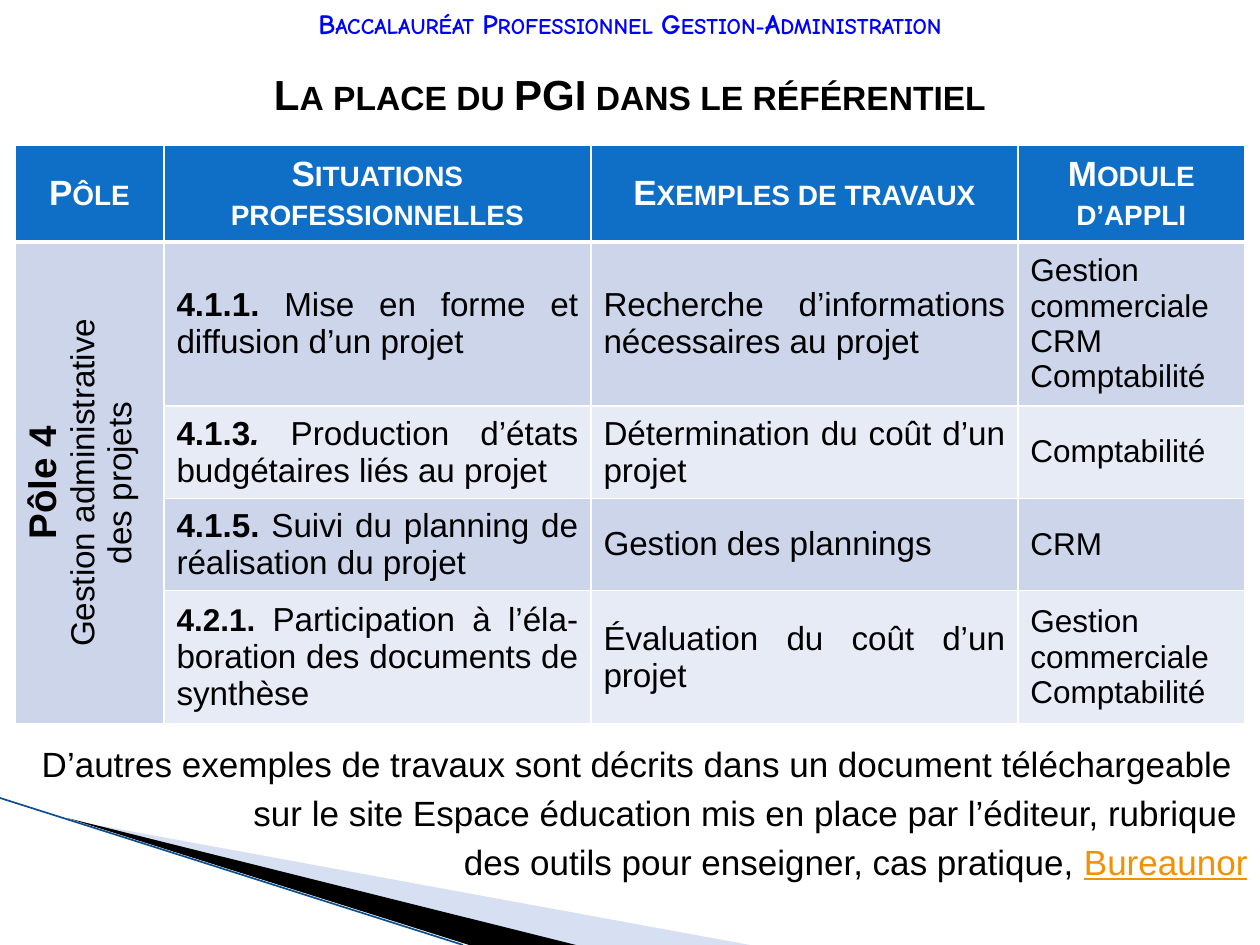
import pptx
import pptx.util
import pptx.dml.color
import pptx.enum.text
import pptx.enum.shapes
import pptx.oxml.ns
import lxml.etree

PX = 914400 // 126
HUE = {"ink": "000000", "white": "FFFFFF", "blue": "0000FF", "head": "0F6FC6",
       "odd": "CCD5EA", "even": "E7EBF5", "pale": "9DB2E1", "edge": "0B4F8F",
       "link": "F49100"}
ALIGN = pptx.enum.text.PP_ALIGN
LEFT, MID, RIGHT, JUST = ALIGN.LEFT, ALIGN.CENTER, ALIGN.RIGHT, ALIGN.JUSTIFY

# Content
BANNER = "Baccalauréat Professionnel Gestion-Administration"
TITLE = "La place du PGI dans le référentiel"
HEADS = ["Pôle", "Situations professionnelles", "Exemples de travaux", "Module d’appli"]
POLE = [("Pôle 4", 22, True), ("Gestion administrative\vdes projets", 19, False)]
# (number, its size, situation, example, example alignment, modules)
ROWS = [
    ("4.1.1.", 19, " Mise en forme et diffusion d’un projet",
     "Recherche d’informations nécessaires au projet", JUST,
     ["Gestion commerciale", "CRM Comptabilité"]),
    ("4.1.3.", 19, " Production d’états budgétaires liés au projet",
     "Détermination du coût d’un projet", JUST, ["Comptabilité"]),
    ("4.1.5.", 19, " Suivi du planning de réalisation du projet",
     "Gestion des plannings", LEFT, ["CRM"]),
    ("4.2.1.", 18, " Participation à l’éla-boration des documents de synthèse",
     "Évaluation du coût d’un projet", JUST,
     ["Gestion commerciale", "Comptabilité"]),
]
# (left, width, text, link text)
NOTES = [
    (20, 1235, "D’autres exemples de travaux sont décrits dans un document téléchargeable ", ""),
    (144, 1116, "sur le site Espace éducation mis en place par l’éditeur, rubrique ", ""),
    (144, 1116, "des outils pour enseigner, cas pratique, ", "Bureaunor"),
]
WIDTHS = [149, 427, 427, 227]
HEIGHTS = [97, 163, 92, 92, 133]
WEDGES = [("pale", 40, [(69, 820), (750, 945), (575, 945)]),
          ("ink", 100, [(67, 818), (576, 945), (469, 945)])]


def rgb(key):
    return pptx.dml.color.RGBColor.from_string(HUE[key])


def node(parent, tag, **attrs):
    return lxml.etree.SubElement(parent, pptx.oxml.ns.qn(tag), attrs)


def style(para, size, color="ink", bold=False, align=LEFT, face="Arial", caps=False):
    para.alignment = align
    font = para.font
    font.size, font.bold, font.name = pptx.util.Pt(size), bold, face
    font.color.rgb = rgb(color)
    if caps:
        para._p.pPr.find(pptx.oxml.ns.qn("a:defRPr")).set("cap", "small")


def write(frame, lines):
    """Fill a frame with (text, style) pairs, one paragraph each."""
    for i, (text, look) in enumerate(lines):
        para = frame.add_paragraph() if i else frame.paragraphs[0]
        para.text = text
        style(para, **look)


def box(x, y, w, h):
    frame = slide.shapes.add_textbox(x * PX, y * PX, w * PX, h * PX).text_frame
    frame.word_wrap = True
    return frame


def dress(cell, fill, base):
    """Draw white borders, then the fill."""
    props = cell._tc.get_or_add_tcPr()
    for side, width in (("L", 1), ("R", 1), ("T", 1), ("B", base)):
        line = node(props, "a:ln" + side, w=str(width * 12700))
        node(node(line, "a:solidFill"), "a:srgbClr", val=HUE["white"])
    cell.fill.solid()
    cell.fill.fore_color.rgb = rgb(fill)
    cell.vertical_anchor = pptx.enum.text.MSO_ANCHOR.MIDDLE


deck = pptx.Presentation()
deck.slide_width, deck.slide_height = 1260 * PX, 945 * PX
slide = deck.slides.add_slide(deck.slide_layouts[5])

# Corner wedges and edge line
for color, alpha, points in WEDGES:
    pen = slide.shapes.build_freeform(*points[0], scale=PX)
    pen.add_line_segments(points[1:], close=True)
    wedge = pen.convert_to_shape()
    wedge.shadow.inherit = False
    wedge.fill.solid()
    wedge.fill.fore_color.rgb = rgb(color)
    wedge.line.fill.background()
    if alpha < 100:
        tint = wedge._element.spPr.find(".//" + pptx.oxml.ns.qn("a:srgbClr"))
        node(tint, "a:alpha", val=str(alpha * 1000))
edge = slide.shapes.add_connector(pptx.enum.shapes.MSO_CONNECTOR.STRAIGHT,
                                  0, 798 * PX, 463 * PX, 945 * PX)
edge.line.color.rgb = rgb("edge")
edge.line.width = pptx.util.Pt(0.95)
node(edge._element.spPr, "a:effectLst")

# Banner and title
write(box(0, 0, 1260, 47),
      [(BANNER, dict(size=16, color="blue", bold=True, align=MID,
                     face="Comic Neue", caps=True))])
title = slide.shapes.title
title.left, title.top, title.width, title.height = 0, 62 * PX, 1260 * PX, 63 * PX
title.text_frame.auto_size = pptx.enum.text.MSO_AUTO_SIZE.NONE
title.text_frame.vertical_anchor = pptx.enum.text.MSO_ANCHOR.MIDDLE
write(title.text_frame, [(TITLE, dict(size=24, bold=True, align=MID, caps=True))])

# Table
grid = slide.shapes.add_table(len(HEIGHTS), len(WIDTHS), 15 * PX, 145 * PX,
                              sum(WIDTHS) * PX, sum(HEIGHTS) * PX).table
grid.first_row = grid.horz_banding = False
for col, width in zip(grid.columns, WIDTHS):
    col.width = width * PX
for r, height in enumerate(HEIGHTS):
    grid.rows[r].height = height * PX
    for c in range(len(WIDTHS)):
        fill = "odd" if r % 2 else "even"
        dress(grid.cell(r, c), fill if r else "head", 1 if r else 3)

for c, head in enumerate(HEADS):
    write(grid.cell(0, c).text_frame,
          [(head, dict(size=20, color="white", bold=True, align=MID, caps=True))])

pole = grid.cell(1, 0)
pole.merge(grid.cell(len(ROWS), 0))
pole._tc.tcPr.set("vert", "vert270")
write(pole.text_frame, [(text, dict(size=size, bold=bold, align=MID))
                        for text, size, bold in POLE])

for r, (num, size, task, work, align, mods) in enumerate(ROWS, 1):
    para = grid.cell(r, 1).text_frame.paragraphs[0]
    style(para, 19, align=JUST)
    for text in (num[:-1], num[-1]):
        run = para.add_run()
        run.text = text
        run.font.bold, run.font.size = True, pptx.util.Pt(size)
    run.font.italic = num == "4.1.3."
    para.add_run().text = task
    write(grid.cell(r, 2).text_frame, [(work, dict(size=19, align=align))])
    write(grid.cell(r, 3).text_frame, [(mod, dict(size=18)) for mod in mods])

# Closing lines
for i, (x, width, text, link) in enumerate(NOTES):
    frame = box(x, 741 + 49 * i, width, 50)
    write(frame, [(text, dict(size=20, align=RIGHT))])
    para = frame.paragraphs[0]
    para.line_spacing = 0.9
    if link:
        run = para.add_run()
        run.text = link
        run.font.underline = True
        run.font.color.rgb = rgb("link")

deck.save("out.pptx")
